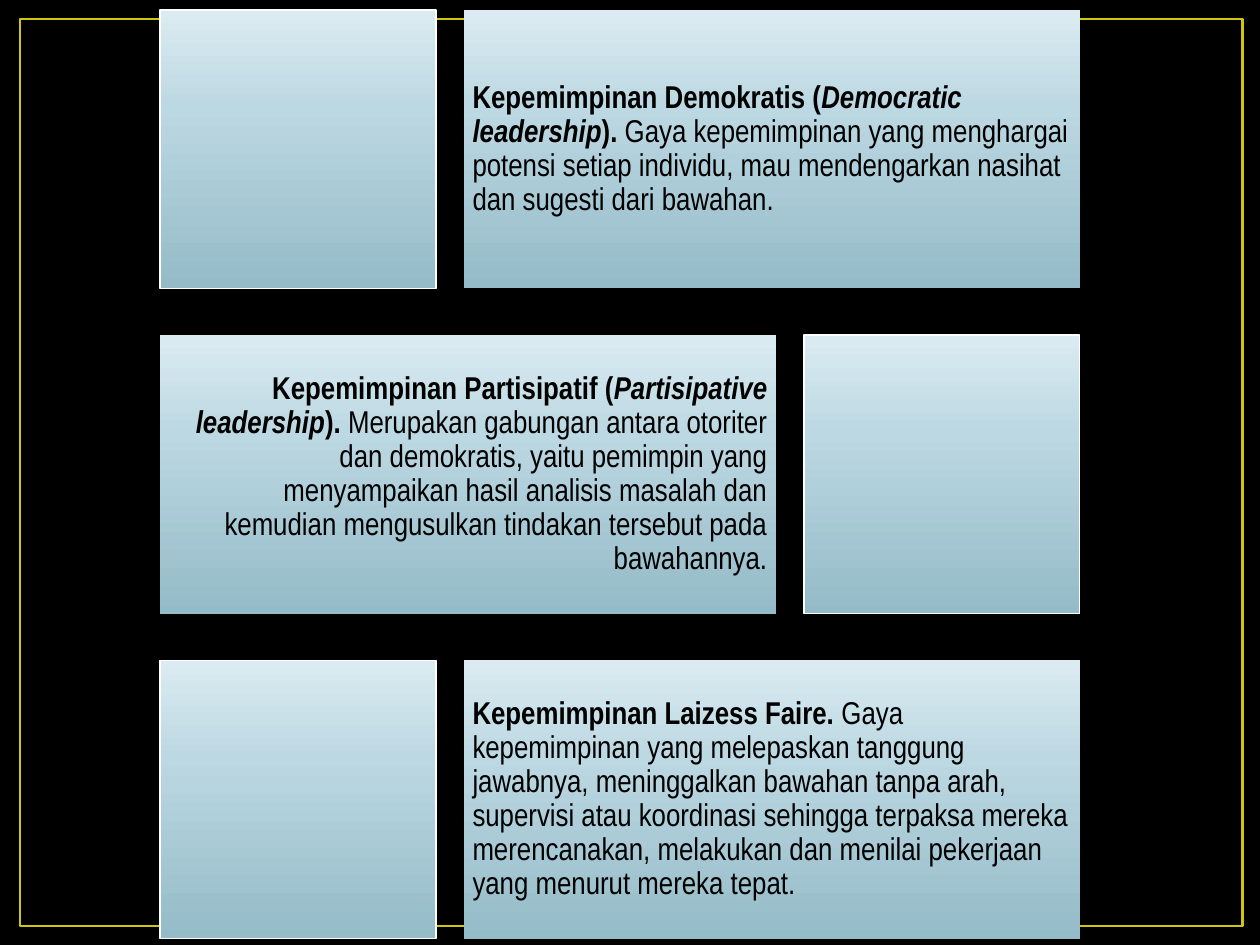
from copy import deepcopy
from dataclasses import dataclass

from pptx import Presentation
from pptx.dml.color import RGBColor
from pptx.enum.shapes import MSO_SHAPE as Shape
from pptx.enum.text import MSO_ANCHOR as Anchor, PP_ALIGN as Align
from pptx.oxml.ns import qn
from pptx.util import Inches, Pt

LEFT, TOP, ROW_STEP = 1.27, 0.08, 2.58
TEXT_WIDTH, TILE_WIDTH, HEIGHT, GAP = 4.89, 2.19, 2.21, 0.22
GRADIENT = ((0, "94BBC8"), (0.65, "BCD8E2"), (1, "DBEBF1"))


@dataclass
class Span:
    text: str
    bold: bool = True
    italic: bool = False


@dataclass
class Style:
    spans: list[Span]
    tile_first: bool = True


STYLES = [
    Style([
        Span("Kepemimpinan Demokratis ("),
        Span("Democratic leadership", italic=True),
        Span("). "),
        Span("Gaya kepemimpinan yang menghargai potensi setiap individu, mau "
             "mendengarkan nasihat dan sugesti dari bawahan.", bold=False),
    ]),
    Style([
        Span("Kepemimpinan Partisipatif ("),
        Span("Partisipative leadership", italic=True),
        Span("). "),
        Span("Merupakan gabungan antara otoriter dan demokratis, yaitu pemimpin "
             "yang menyampaikan hasil analisis masalah dan kemudian mengusulkan "
             "tindakan tersebut pada bawahannya.", bold=False),
    ], tile_first=False),
    Style([
        Span("Kepemimpinan Laizess Faire."),
        Span(" Gaya kepemimpinan yang melepaskan tanggung jawabnya, meninggalkan "
             "bawahan tanpa arah, supervisi atau koordinasi sehingga terpaksa "
             "mereka merencanakan, melakukan dan menilai pekerjaan yang menurut "
             "mereka tepat.", bold=False),
    ]),
]


def color(value: str) -> RGBColor:
    return RGBColor.from_string(value)


def add_rectangle(page, left: float, top: float, width: float, height: float):
    box = page.shapes.add_shape(Shape.RECTANGLE, Inches(left), Inches(top),
                                Inches(width), Inches(height))
    box.shadow.inherit = False
    return box


def set_line(box, value: str, width: float) -> None:
    box.line.color.rgb = color(value)
    box.line.width = Pt(width)


def fill_gradient(box) -> None:
    """Blend the three blues from the bottom edge to the top."""
    box.fill.gradient()
    box.fill.gradient_angle = 90
    stops = box._element.spPr.find(qn("a:gradFill")).find(qn("a:gsLst"))
    stops.insert(1, deepcopy(stops[0]))
    for stop, (position, value) in zip(box.fill.gradient_stops, GRADIENT):
        stop.position = position
        stop.color.rgb = color(value)


def write_text(box, spans: list[Span], align: Align) -> None:
    frame = box.text_frame
    frame.word_wrap = True
    frame.vertical_anchor = Anchor.MIDDLE
    frame.margin_left = frame.margin_right = Inches(0.07)
    frame.margin_top = frame.margin_bottom = Inches(0.07)
    para = frame.paragraphs[0]
    para.alignment = align
    para.line_spacing = 0.9
    for span in spans:
        run = para.add_run()
        run.text = span.text
        run.font.name = "Arial Narrow"
        run.font.size = Pt(18)
        run.font.bold = span.bold
        run.font.italic = span.italic
        run.font.color.rgb = color("000000")


def add_style(page, style: Style, top: float) -> None:
    """Draw one row: a text panel with an empty tile beside it."""
    if style.tile_first:
        tile_left, text_left = LEFT, LEFT + TILE_WIDTH + GAP
        align = Align.LEFT
    else:
        tile_left, text_left = LEFT + TEXT_WIDTH + GAP, LEFT
        align = Align.RIGHT
    panel = add_rectangle(page, text_left, top, TEXT_WIDTH, HEIGHT)
    fill_gradient(panel)
    panel.line.fill.background()
    write_text(panel, style.spans, align)
    tile = add_rectangle(page, tile_left, top, TILE_WIDTH, HEIGHT)
    fill_gradient(tile)
    set_line(tile, "FFFFFF", 0.75)


def main() -> None:
    deck = Presentation()
    deck.slide_width, deck.slide_height = Inches(10), Inches(7.5)
    page = deck.slides.add_slide(deck.slide_layouts[6])
    page.background.fill.solid()
    page.background.fill.fore_color.rgb = color("000000")

    border = add_rectangle(page, 0.16, 0.15, 9.7, 7.2)
    border.fill.background()
    set_line(border, "CFC60D", 1.5)
    for row, style in enumerate(STYLES):
        add_style(page, style, TOP + row * ROW_STEP)
    deck.save("out.pptx")


if __name__ == "__main__":
    main()
